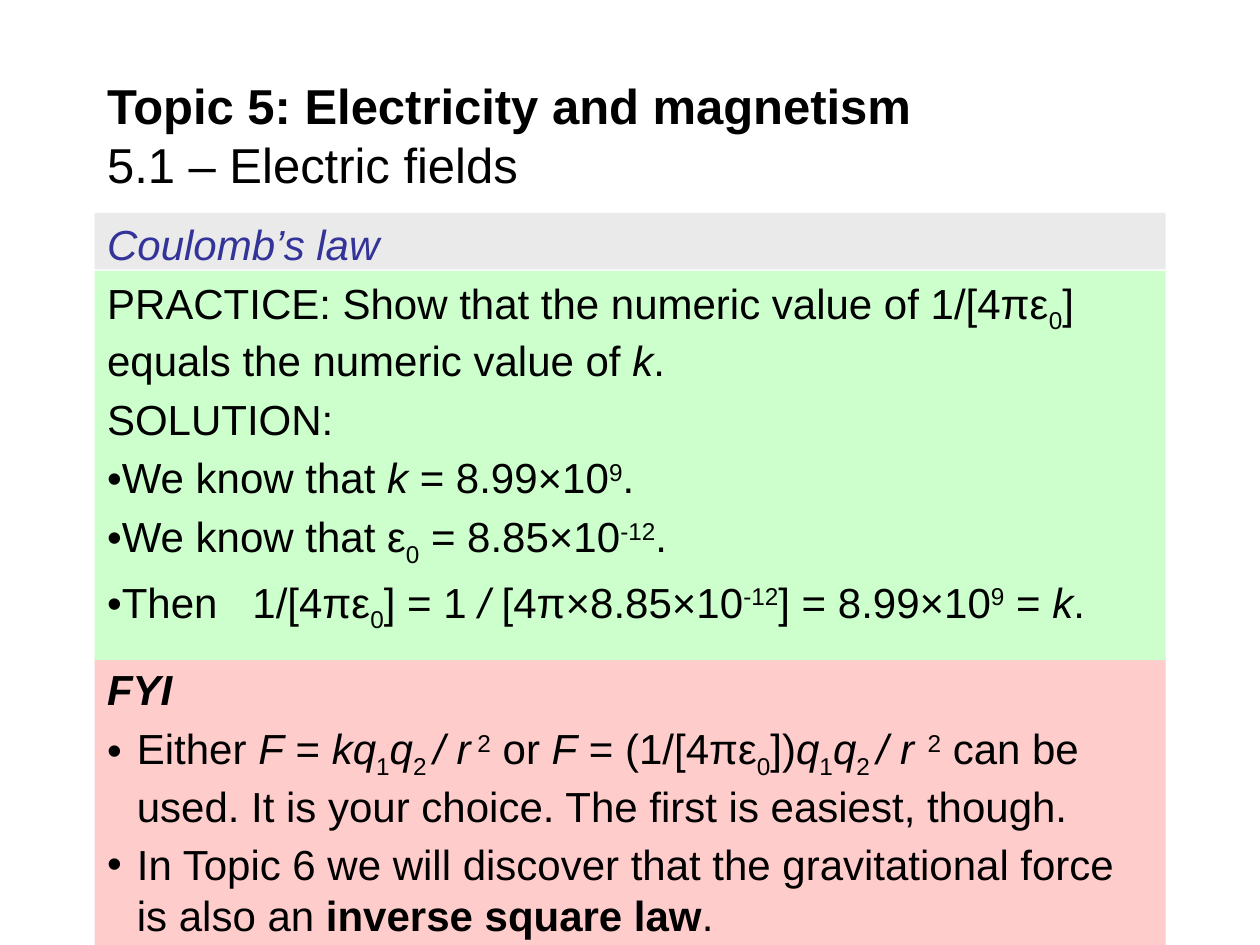
from lxml import etree
from pptx import Presentation
from pptx import util as u
from pptx.dml.color import RGBColor
from pptx.enum import shapes, text
from pptx.oxml.ns import qn

BLACK = RGBColor(0x00, 0x00, 0x00)
BLUE = RGBColor(0x33, 0x33, 0x99)
GRAY = RGBColor(0xEA, 0xEA, 0xEA)
GREEN = RGBColor(0xCC, 0xFF, 0xCC)
PINK = RGBColor(0xFF, 0xCC, 0xCC)

FONT = "Arial"
LEFT, WIDTH = 1.91, 21.59
HANGING = 0.6
BASELINES = {"sub": "-25000", "sup": "30000"}

# Content: each paragraph is a list of (text, styles) runs
TITLE = [
    [("Topic 5: Electricity and magnetism", "bold")],
    [("5.1 – Electric fields", "")],
]
HEADING = [[("Coulomb’s law", "italic")]]
PRACTICE = [
    [("PRACTICE: Show that the numeric value of 1/[4πε", ""), ("0", "sub"),
     ("] equals the numeric value of ", ""), ("k", "italic"), (".", "")],
    [("SOLUTION:", "")],
    [("•We know that ", ""), ("k", "italic"), (" = 8.99×10", ""), ("9", "sup"), (".", "")],
    [("•We know that ε", ""), ("0", "sub"), (" = 8.85×10", ""), ("-12", "sup"), (".", "")],
    [("•Then   1/[4πε", ""), ("0", "sub"), ("] = 1 ", ""), ("/", "italic"),
     (" [4π×8.85×10", ""), ("-12", "sup"), ("] = 8.99×10", ""), ("9", "sup"),
     (" = ", ""), ("k", "italic"), (".", "")],
]
CHARGES = [("1", "sub"), ("q", "italic"), ("2 ", "sub"), ("/ r", "italic")]
FYI = [
    [("FYI", "bold italic")],
    [("Either ", ""), ("F", "italic"), (" = ", ""), ("kq", "italic"), *CHARGES,
     (" 2", "sup"), (" or ", ""), ("F", "italic"), (" = (1/[4πε", ""), ("0", "sub"),
     ("])", ""), ("q", "italic"), *CHARGES, ("  2", "sup"),
     (" can be used. It is your choice. The first is easiest, though.", "")],
    [("In Topic 6 we will discover that the gravitational force is also an ", ""),
     ("inverse square law", "bold"), (".", "")],
]

# Panels from back to front: top, height, fill, font colour, paragraphs, first bulleted one
PANELS = [
    (13.26, 5.79, PINK, BLACK, FYI, 1),
    (4.29, 1.14, GRAY, BLUE, HEADING, None),
    (5.46, 7.85, GREEN, BLACK, PRACTICE, None),
]


def add_runs(paragraph, runs, size, color):
    for content, styles in runs:
        run = paragraph.add_run()
        run.text = content
        font = run.font
        font.name, font.size = FONT, u.Pt(size)
        font.color.rgb = color
        font.bold = "bold" in styles
        font.italic = "italic" in styles
        if styles in BASELINES:
            font._element.set("baseline", BASELINES[styles])


def format_paragraph(paragraph, bulleted):
    """Space before is 20 % of the text size; bullets get a hanging indent."""
    properties = paragraph._p.get_or_add_pPr()
    spacing = etree.SubElement(properties, qn("a:spcBef"))
    etree.SubElement(spacing, qn("a:spcPct")).set("val", "20000")
    if bulleted:
        properties.set("marL", str(u.Cm(HANGING)))
        properties.set("indent", str(-u.Cm(HANGING)))
        etree.SubElement(properties, qn("a:buFont")).set("typeface", FONT)
        etree.SubElement(properties, qn("a:buChar")).set("char", "•")


def add_panel(slide, top, height, fill, color, paragraphs, first_bullet):
    panel = slide.shapes.add_shape(shapes.MSO_SHAPE.RECTANGLE, u.Cm(LEFT), u.Cm(top),
                                   u.Cm(WIDTH), u.Cm(height))
    panel.shadow.inherit = False
    panel.fill.solid()
    panel.fill.fore_color.rgb = fill
    panel.line.fill.background()
    frame = panel.text_frame
    frame.word_wrap = True
    frame.vertical_anchor = text.MSO_ANCHOR.TOP
    for index, runs in enumerate(paragraphs):
        paragraph = frame.add_paragraph() if index else frame.paragraphs[0]
        paragraph.alignment = text.PP_ALIGN.LEFT
        format_paragraph(paragraph, first_bullet is not None and index >= first_bullet)
        add_runs(paragraph, runs, 24, color)


def add_title(slide):
    box = slide.shapes.add_textbox(u.Cm(LEFT), u.Cm(1.47), u.Cm(WIDTH), u.Cm(2.49))
    frame = box.text_frame
    frame.word_wrap = True
    frame.vertical_anchor = text.MSO_ANCHOR.MIDDLE
    paragraph = frame.paragraphs[0]
    for index, runs in enumerate(TITLE):
        if index:
            paragraph.add_line_break()
        add_runs(paragraph, runs, 28, BLACK)


def main():
    presentation = Presentation()
    presentation.slide_width, presentation.slide_height = u.Cm(25.4), u.Cm(19.05)
    slide = presentation.slides.add_slide(presentation.slide_layouts[6])
    for panel in PANELS:
        add_panel(slide, *panel)
    add_title(slide)
    presentation.save("out.pptx")


if __name__ == "__main__":
    main()
